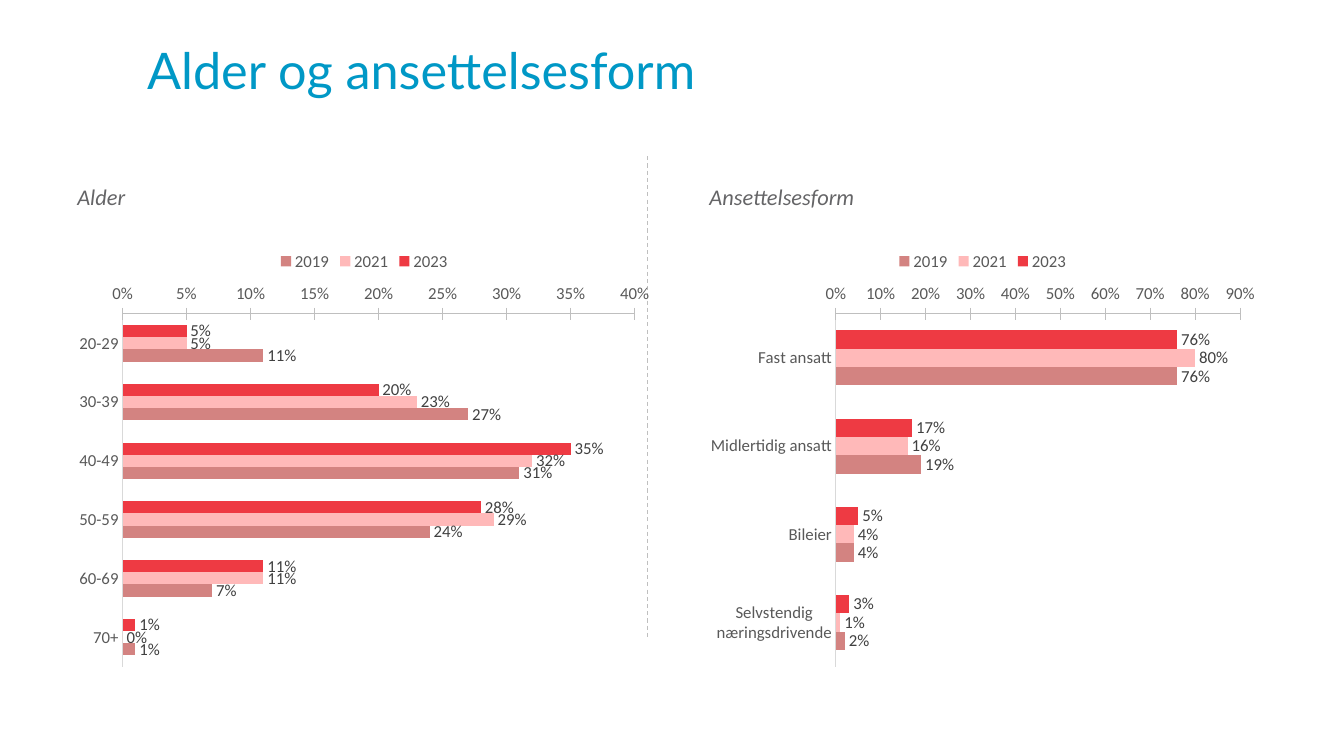
import pptx
import pptx.util
import pptx.chart.data
import pptx.dml.color
import pptx.enum.chart
import pptx.enum.dml
import pptx.enum.shapes
import pptx.enum.text
import pptx.oxml

Pt = pptx.util.Pt
RGB = pptx.dml.color.RGBColor.from_string
ENUM = pptx.enum

# Content
TITLE = "Alder og ansettelsesform"
PANELS = [
    {
        "head": "Alder", "left": 48.2, "width": 424, "top": 0.4, "step": 0.05,
        "groups": ["20-29", "30-39", "40-49", "50-59", "60-69", "70+"],
        "years": {
            "2023": [0.05, 0.20, 0.35, 0.28, 0.11, 0.01],
            "2021": [0.05, 0.23, 0.32, 0.29, 0.11, 0],
            "2019": [0.11, 0.27, 0.31, 0.24, 0.07, 0.01],
        },
    },
    {
        "head": "Ansettelsesform", "left": 499.7, "width": 404.6, "top": 0.9, "step": 0.1,
        "groups": ["Fast ansatt", "Midlertidig ansatt", "Bileier",
                   "Selvstendig næringsdrivende"],
        "years": {
            "2023": [0.76, 0.17, 0.05, 0.03],
            "2021": [0.80, 0.16, 0.04, 0.01],
            "2019": [0.76, 0.19, 0.04, 0.02],
        },
    },
]

# Theme
THEME = {
    "title": {"name": "Lato", "size": 36, "color": "0098C6"},
    "head": {"name": "Calibri", "size": 16, "color": "656567", "italic": True},
    "axis": {"name": "Calibri", "size": 12, "color": "595959"},
    "label": {"name": "Calibri", "size": 12, "color": "404040"},
    "bars": {"2023": "EE3A43", "2021": "FFB9B9", "2019": "D38381"},
    "rule": "BFBFBF",
    "base": "D9D9D9",
}


def put(thing, **vals):
    for key, val in vals.items():
        setattr(thing, key, val)


def style(font, kind):
    for key, val in THEME[kind].items():
        if key == "color":
            font.color.rgb = RGB(val)
        else:
            setattr(font, key, Pt(val) if key == "size" else val)


def write(shape, text, kind, anchor):
    frame = shape.text_frame
    frame.text = text
    put(frame, word_wrap=True, vertical_anchor=anchor,
        auto_size=ENUM.text.MSO_AUTO_SIZE.NONE)
    para = frame.paragraphs[0]
    para.alignment = ENUM.text.PP_ALIGN.LEFT
    style(para.runs[0].font, kind)


def stroke(line, color):
    line.color.rgb = RGB(color)
    line.width = Pt(0.75)


def draw_chart(slide, panel):
    data = pptx.chart.data.CategoryChartData(number_format="0%")
    data.categories = panel["groups"]
    for year, vals in panel["years"].items():
        data.add_series(year, vals)
    chart = slide.shapes.add_chart(
        ENUM.chart.XL_CHART_TYPE.BAR_CLUSTERED, Pt(panel["left"]), Pt(171.4),
        Pt(panel["width"]), Pt(311), data).chart
    put(chart, has_title=False, has_legend=True)
    style(chart.font, "axis")
    put(chart.legend, position=ENUM.chart.XL_LEGEND_POSITION.TOP,
        include_in_layout=False)
    style(chart.legend.font, "axis")

    # Axes
    mark = ENUM.chart.XL_TICK_MARK
    rows, scale = chart.category_axis, chart.value_axis
    put(rows, reverse_order=True, major_tick_mark=mark.NONE)
    put(scale, minimum_scale=0, maximum_scale=panel["top"],
        major_unit=panel["step"], major_tick_mark=mark.CROSS)
    put(scale.tick_labels, number_format="0%", number_format_is_linked=False)
    for axis, color in ((rows, THEME["base"]), (scale, THEME["rule"])):
        put(axis, has_major_gridlines=False, minor_tick_mark=mark.NONE)
        stroke(axis.format.line, color)
        style(axis.tick_labels.font, "axis")

    # Bars and labels
    plot = chart.plots[0]
    put(plot, gap_width=182, overlap=0, vary_by_categories=False)
    for bars in plot.series:
        bars.format.fill.solid()
        bars.format.fill.fore_color.rgb = RGB(THEME["bars"][bars.name])
        bars.invert_if_negative = False
        labels = bars.data_labels
        put(labels, show_value=True, number_format="0%",
            number_format_is_linked=False,
            position=ENUM.chart.XL_LABEL_POSITION.OUTSIDE_END)
        style(labels.font, "label")


def main():
    deck = pptx.Presentation()
    put(deck, slide_width=Pt(960), slide_height=Pt(540))
    slide = deck.slides.add_slide(deck.slide_layouts[5])
    anchor = ENUM.text.MSO_ANCHOR

    # Title
    title = slide.shapes.title
    put(title, left=Pt(97.9), top=Pt(4.3), width=Pt(813.6), height=Pt(90))
    write(title, TITLE, "title", anchor.MIDDLE)

    # Dashed rule between the panels
    rule = slide.shapes.add_connector(
        ENUM.shapes.MSO_CONNECTOR.STRAIGHT, Pt(462.2), Pt(111.6), Pt(462.2), Pt(455))
    stroke(rule.line, THEME["rule"])
    rule.line.dash_style = ENUM.dml.MSO_LINE.DASH
    props = rule.element.spPr
    props.append(pptx.oxml.parse_xml(
        '<a:effectLst xmlns:a="http://schemas.openxmlformats.org/drawingml/2006/main"/>'))

    # Panels
    for panel in PANELS:
        box = slide.shapes.add_textbox(Pt(panel["left"]), Pt(103), Pt(424), Pt(50.4))
        write(box, panel["head"], "head", anchor.BOTTOM)
        draw_chart(slide, panel)

    deck.save("out.pptx")


if __name__ == "__main__":
    main()
